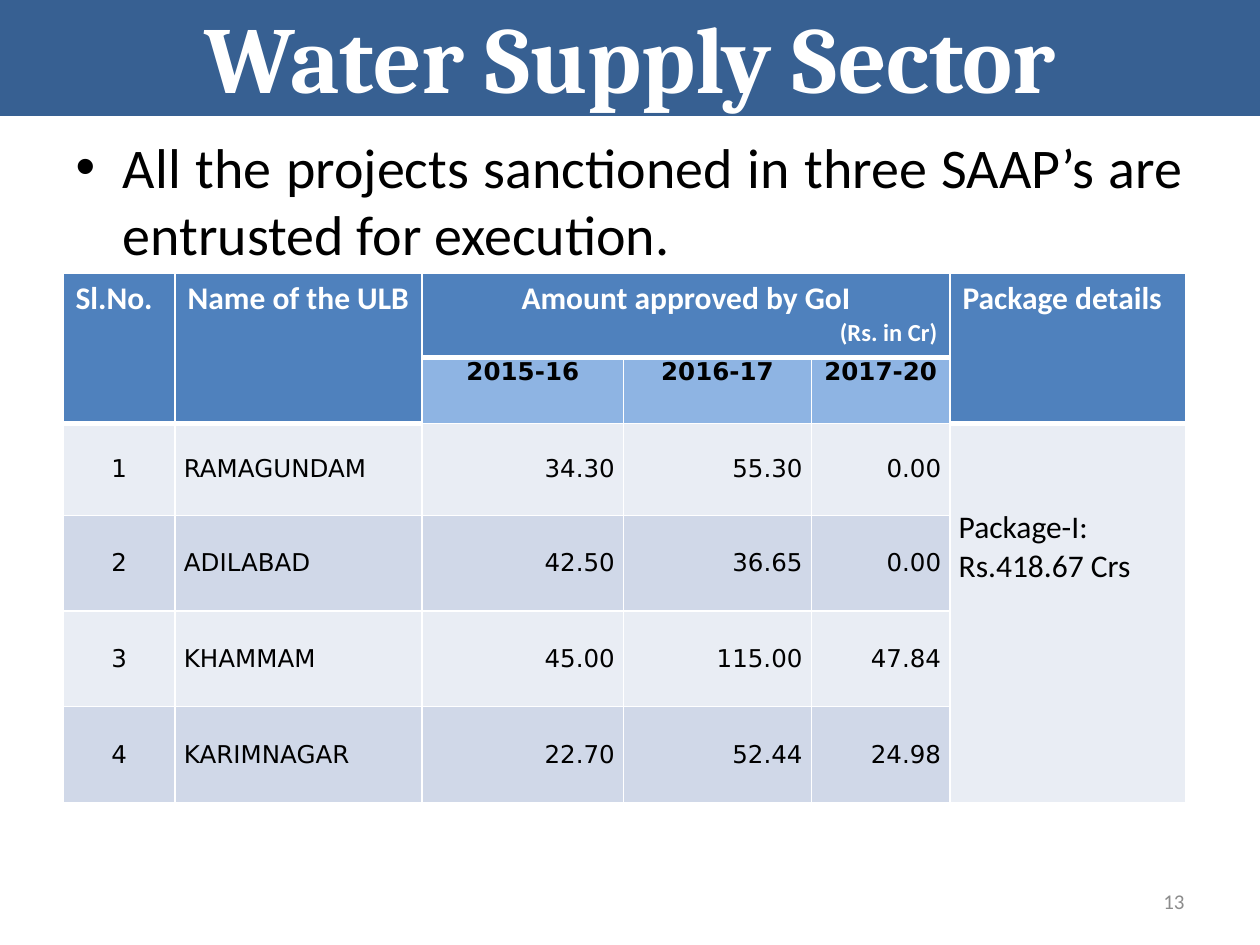
from dataclasses import dataclass

from lxml.etree import SubElement
from pptx import Presentation
from pptx.dml.color import RGBColor
from pptx.enum.text import MSO_ANCHOR, PP_ALIGN
from pptx.oxml.ns import qn
from pptx.table import Table, _Cell
from pptx.text.text import TextFrame, _Paragraph
from pptx.util import Inches, Pt


@dataclass(frozen=True)
class Theme:
    banner: str = "376092"
    header: str = "4F81BD"
    year: str = "8EB4E3"
    bands: tuple[str, str] = ("E9EDF4", "D0D8E8")
    white: str = "FFFFFF"
    black: str = "000000"
    grey: str = "8C8C8C"
    title_font: str = "Cambria"
    text_font: str = "Calibri"
    table_font: str = "DejaVu Sans"
    title_size: int = 54
    body_size: int = 32
    header_size: int = 18
    cell_size: int = 14
    number_size: int = 12


@dataclass(frozen=True)
class TextStyle:
    font: str
    size: int
    color: str
    bold: bool = False


@dataclass(frozen=True)
class City:
    name: str
    amounts: tuple[str, str, str]


THEME = Theme()
TITLE = TextStyle(THEME.title_font, THEME.title_size, THEME.white, True)
BODY = TextStyle(THEME.text_font, THEME.body_size, THEME.black)
HEADER = TextStyle(THEME.text_font, THEME.header_size, THEME.white, True)
UNIT = TextStyle(THEME.text_font, THEME.cell_size, THEME.white, True)
YEAR = TextStyle(THEME.table_font, THEME.cell_size, THEME.black, True)
CELL = TextStyle(THEME.table_font, THEME.cell_size, THEME.black)
PACKAGE = TextStyle(THEME.text_font, THEME.header_size, THEME.black)
NUMBER = TextStyle(THEME.text_font, THEME.number_size, THEME.grey)

YEARS = ("2015-16", "2016-17", "2017-20")
CITIES = (
    City("RAMAGUNDAM", ("34.30", "55.30", "0.00")),
    City("ADILABAD", ("42.50", "36.65", "0.00")),
    City("KHAMMAM", ("45.00", "115.00", "47.84")),
    City("KARIMNAGAR", ("22.70", "52.44", "24.98")),
)
COLUMN_WIDTHS = (0.89, 1.96, 1.6, 1.49, 1.1, 1.87)
ROW_HEIGHTS = (0.67, 0.52, 0.73, 0.76, 0.76, 0.76)
FIRST_YEAR_COLUMN = 2
FIRST_CITY_ROW = 2
PACKAGE_COLUMN = 5
YEAR_COLUMNS = range(FIRST_YEAR_COLUMN, PACKAGE_COLUMN)


def place(shape, left: float, top: float, width: float, height: float) -> None:
    shape.left, shape.top = Inches(left), Inches(top)
    shape.width, shape.height = Inches(width), Inches(height)


def write(paragraph: _Paragraph, text: str, style: TextStyle,
          alignment: PP_ALIGN = PP_ALIGN.LEFT) -> None:
    paragraph.alignment = alignment
    run = paragraph.add_run()
    run.text = text
    run.font.name = style.font
    run.font.size = Pt(style.size)
    run.font.bold = style.bold
    run.font.color.rgb = RGBColor.from_string(style.color)


def fill_cell(cell: _Cell, color: str) -> None:
    cell.fill.solid()
    cell.fill.fore_color.rgb = RGBColor.from_string(color)


def write_compact(cell: _Cell, text: str, style: TextStyle, alignment: PP_ALIGN,
                  anchor: MSO_ANCHOR = MSO_ANCHOR.MIDDLE) -> None:
    """Write into a cell with narrow side margins and none above or below."""
    cell.margin_left = cell.margin_right = Inches(0.07)
    cell.margin_top = cell.margin_bottom = 0
    cell.vertical_anchor = anchor
    write(cell.text_frame.paragraphs[0], text, style, alignment)


def line_below(row: int, column: int) -> int:
    """Width in points: the header block ends in a heavier line."""
    header_end = 0 if column in YEAR_COLUMNS else 1
    return 3 if row == header_end else 1


def draw_borders(table: Table) -> None:
    for row in range(len(ROW_HEIGHTS)):
        for column in range(len(COLUMN_WIDTHS)):
            properties = table.cell(row, column)._tc.get_or_add_tcPr()
            widths = {"a:lnL": 1, "a:lnR": 1, "a:lnT": line_below(row - 1, column),
                      "a:lnB": line_below(row, column)}
            for position, (tag, width) in enumerate(widths.items()):
                line = SubElement(properties, qn(tag), w=str(Pt(width)))
                fill = SubElement(line, qn("a:solidFill"))
                SubElement(fill, qn("a:srgbClr"), val=THEME.white)
                properties.insert(position, line)


def add_header(table: Table) -> None:
    for column, text in ((0, "Sl.No."), (1, "Name of the ULB"),
                         (PACKAGE_COLUMN, "Package details")):
        cell = table.cell(0, column)
        cell.merge(table.cell(1, column))
        write(cell.text_frame.paragraphs[0], text, HEADER)

    amount = table.cell(0, FIRST_YEAR_COLUMN)
    amount.merge(table.cell(0, PACKAGE_COLUMN - 1))
    frame: TextFrame = amount.text_frame
    write(frame.paragraphs[0], "Amount approved by GoI", HEADER, PP_ALIGN.CENTER)
    write(frame.add_paragraph(), "(Rs. in Cr)", UNIT, PP_ALIGN.RIGHT)

    for column, year in zip(YEAR_COLUMNS, YEARS):
        write_compact(table.cell(1, column), year, YEAR, PP_ALIGN.CENTER, MSO_ANCHOR.TOP)


def add_cities(table: Table) -> None:
    for number, city in enumerate(CITIES, start=1):
        cells = table.rows[FIRST_CITY_ROW + number - 1].cells
        write_compact(cells[0], str(number), CELL, PP_ALIGN.CENTER)
        write_compact(cells[1], city.name, CELL, PP_ALIGN.LEFT)
        for column, amount in zip(YEAR_COLUMNS, city.amounts):
            write_compact(cells[column], amount, CELL, PP_ALIGN.RIGHT)

    package = table.cell(FIRST_CITY_ROW, PACKAGE_COLUMN)
    package.merge(table.cell(len(ROW_HEIGHTS) - 1, PACKAGE_COLUMN))
    write_compact(package, "Package-I: Rs.418.67 Crs", PACKAGE, PP_ALIGN.JUSTIFY,
                  MSO_ANCHOR.TOP)
    package.margin_top = Inches(0.68)


def color_cells(table: Table) -> None:
    for row in range(len(ROW_HEIGHTS)):
        for column in range(len(COLUMN_WIDTHS)):
            if row >= FIRST_CITY_ROW:
                color = THEME.bands[(row - FIRST_CITY_ROW) % 2]
            elif row == 1 and column in YEAR_COLUMNS:
                color = THEME.year
            else:
                color = THEME.header
            fill_cell(table.cell(row, column), color)


def add_amount_table(slide) -> None:
    table = slide.shapes.add_table(
        len(ROW_HEIGHTS), len(COLUMN_WIDTHS), Inches(0.5), Inches(2.17),
        Inches(sum(COLUMN_WIDTHS)), Inches(sum(ROW_HEIGHTS))).table
    for column, width in zip(table.columns, COLUMN_WIDTHS):
        column.width = Inches(width)
    for row, height in zip(table.rows, ROW_HEIGHTS):
        row.height = Inches(height)
    add_header(table)
    add_cities(table)
    color_cells(table)
    draw_borders(table)


def main() -> None:
    presentation = Presentation()
    presentation.slide_width, presentation.slide_height = Inches(10), Inches(7.5)
    slide = presentation.slides.add_slide(presentation.slide_layouts[1])

    title, body = slide.placeholders
    place(title, 0, -0.03, 10, 0.95)
    title.fill.solid()
    title.fill.fore_color.rgb = RGBColor.from_string(THEME.banner)
    title.text_frame.vertical_anchor = MSO_ANCHOR.MIDDLE
    write(title.text_frame.paragraphs[0], "Water Supply Sector", TITLE, PP_ALIGN.CENTER)

    place(body, 0.5, 1, 9, 5.92)
    write(body.text_frame.paragraphs[0],
          "All the projects sanctioned in three SAAP’s are entrusted for execution.",
          BODY, PP_ALIGN.JUSTIFY)

    add_amount_table(slide)

    number = slide.shapes.add_textbox(Inches(7.17), Inches(6.95), Inches(2.33), Inches(0.4))
    number.text_frame.word_wrap = True
    number.text_frame.vertical_anchor = MSO_ANCHOR.MIDDLE
    write(number.text_frame.paragraphs[0], "13", NUMBER, PP_ALIGN.RIGHT)

    presentation.save("out.pptx")


if __name__ == "__main__":
    main()
